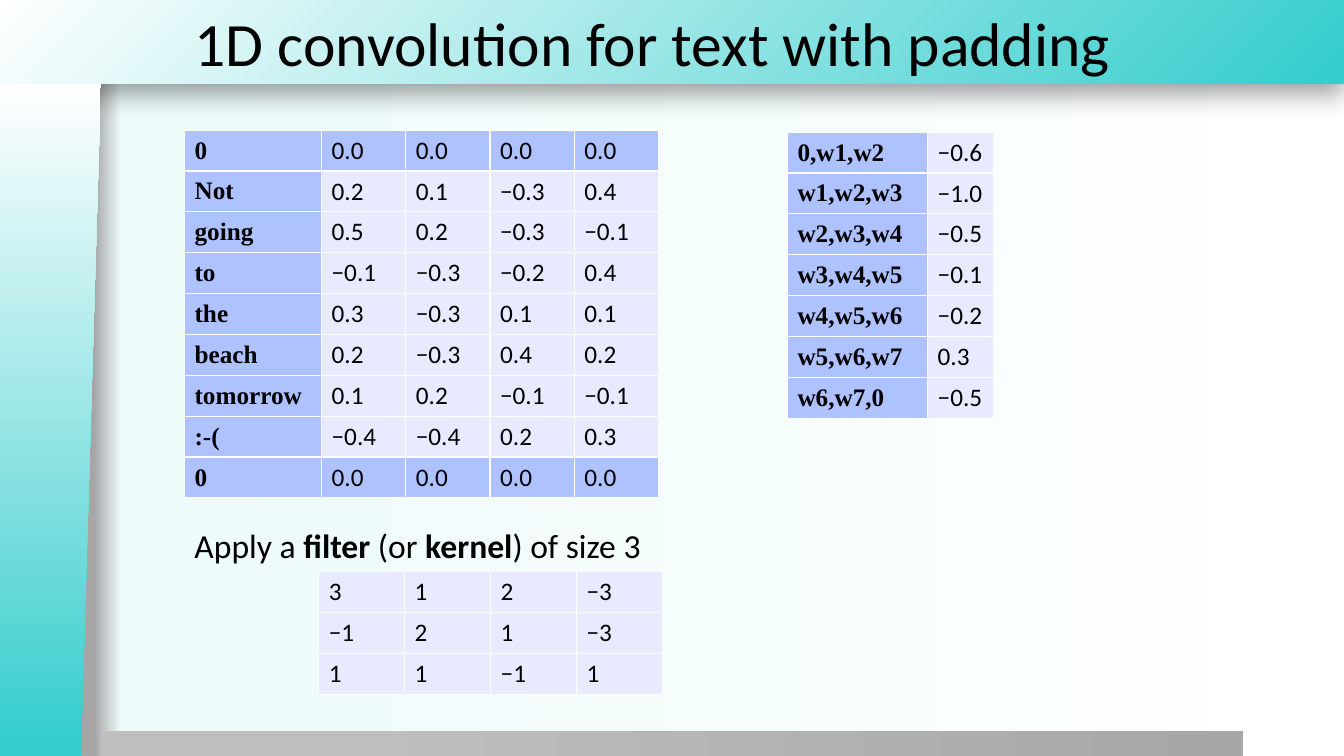
from pptx import Presentation
from pptx import util as u
from pptx.dml.color import RGBColor
from pptx.enum import shapes, text
from pptx.oxml import parse_xml
from pptx.oxml.ns import nsdecls, qn

COLORS = {
    "teal": "34CCCC", "white": "FFFFFF", "black": "000000",
    "edge": "A6A6A6", "mist": "EDFBFB", "silver": "BFBFBF", "gray": "A7A7A7",
    "label": "ADC2FF", "value": "E8EAFF",
}
LINEAR = '<a:lin ang="0" scaled="0"/>'
FROM_CORNER = '<a:path path="circle"><a:fillToRect l="100000" t="100000"/></a:path>'

presentation = Presentation()
presentation.slide_width = u.Inches(13.33)
presentation.slide_height = u.Inches(7.5)
column = presentation.slide_width / 100
row = presentation.slide_height / 100
slide = presentation.slides.add_slide(presentation.slide_layouts[5])


def box(left, top, width, height):
    return [int(n) for n in (left * column, top * row, width * column, height * row)]


def fill_gradient(fill, properties, stops, direction):
    fill.solid()
    stop_xml = "".join(
        f'<a:gs pos="{position * 1000}"><a:srgbClr val="{COLORS[name]}"/></a:gs>'
        for position, name in stops)
    properties.replace(properties.find(qn("a:solidFill")), parse_xml(
        f'<a:gradFill {nsdecls("a")} rotWithShape="1">'
        f'<a:gsLst>{stop_xml}</a:gsLst>{direction}</a:gradFill>'))


background_fill = slide.background.fill
background_fill.solid()
fill_gradient(background_fill, slide.element.cSld.bg.bgPr,
              [(7, "edge"), (9, "mist"), (100, "white")], LINEAR)

bands = []
for kind, place, stops, direction in [
    (shapes.MSO_SHAPE.RECTANGLE, (-0.05, 0, 100.05, 11.07),
     [(0, "teal"), (100, "white")], FROM_CORNER),
    (shapes.MSO_SHAPE.RECTANGLE, (7.5, 96.67, 85, 3.47),
     [(20, "silver"), (100, "gray")], LINEAR),
    (shapes.MSO_SHAPE.FLOWCHART_MANUAL_INPUT, (-21.3, 48.93, 50.11, 13.33),
     [(1, "teal"), (100, "white")], LINEAR),
]:
    band = slide.shapes.add_shape(kind, *box(*place))
    band.line.fill.background()
    band.shadow.inherit = False
    fill_gradient(band.fill, band.element.spPr, stops, direction)
    bands.append(band)

header, footer, side = bands
side.rotation = 270
side.element.spPr.find(qn("a:xfrm")).set("flipV", "1")
header.element.spPr.find(qn("a:effectLst")).append(parse_xml(
    f'<a:outerShdw {nsdecls("a")} blurRad="{u.Pt(20)}" dist="{u.Pt(6)}" dir="5400000" '
    f'algn="t" rotWithShape="0"><a:srgbClr val="{COLORS["black"]}">'
    '<a:alpha val="40000"/></a:srgbClr></a:outerShdw>'))

title = slide.shapes.title
side.element.addnext(title.element)
title.left, title.top, title.width, title.height = box(13.73, 0, 86.27, 11.07)
title.text_frame.text = "1D convolution for text with padding"
title.text_frame.auto_size = text.MSO_AUTO_SIZE.NONE
title.text_frame.vertical_anchor = text.MSO_ANCHOR.MIDDLE
paragraph = title.text_frame.paragraphs[0]
paragraph.alignment = text.PP_ALIGN.LEFT
paragraph.font.size = u.Pt(44)
paragraph.font.name = "Calibri"
paragraph.font.color.rgb = RGBColor.from_string(COLORS["black"])

embeddings = [
    ["0", "0.0", "0.0", "0.0", "0.0"],
    ["Not", "0.2", "0.1", "−0.3", "0.4"],
    ["going", "0.5", "0.2", "−0.3", "−0.1"],
    ["to", "−0.1", "−0.3", "−0.2", "0.4"],
    ["the", "0.3", "−0.3", "0.1", "0.1"],
    ["beach", "0.2", "−0.3", "0.4", "0.2"],
    ["tomorrow", "0.1", "0.2", "−0.1", "−0.1"],
    [":-(", "−0.4", "−0.4", "0.2", "0.3"],
    ["0", "0.0", "0.0", "0.0", "0.0"],
]
kernel = [["3", "1", "2", "−3"], ["−1", "2", "1", "−3"], ["1", "1", "−1", "1"]]
outputs = [
    ["0,w1,w2", "−0.6"], ["w1,w2,w3", "−1.0"], ["w2,w3,w4", "−0.5"],
    ["w3,w4,w5", "−0.1"], ["w4,w5,w6", "−0.2"], ["w5,w6,w7", "0.3"],
    ["w6,w7,0", "−0.5"],
]
row_height = 5.41

for left, top, widths, rows, has_labels in [
    (13.73, 17.2, [10.2] + [6.27] * 4, embeddings, True),
    (23.71, 75.6, [6.4] * 4, kernel, False),
    (58.59, 17.47, [10.43, 4.88], outputs, True),
]:
    table = slide.shapes.add_table(
        len(rows), len(widths),
        *box(left, top, sum(widths), row_height * len(rows))).table
    table.first_row = False
    table.horz_banding = False
    for table_column, width in zip(table.columns, widths):
        table_column.width = int(width * column)
    for row_index, values in enumerate(rows):
        is_padding = has_labels and values[0] == "0"
        for column_index, value in enumerate(values):
            is_label = has_labels and column_index == 0
            cell = table.cell(row_index, column_index)
            cell.text = value
            cell.vertical_anchor = text.MSO_ANCHOR.MIDDLE
            cell.fill.solid()
            cell.fill.fore_color.rgb = RGBColor.from_string(
                COLORS["label" if is_label or is_padding else "value"])
            font = cell.text_frame.paragraphs[0].font
            font.size = u.Pt(18)
            font.name = "Times New Roman" if is_label else "Calibri"
            font.bold = is_label
            font.color.rgb = RGBColor.from_string(COLORS["black"])

caption = slide.shapes.add_textbox(*box(13.73, 68.8, 35.56, 6.67))
caption.text_frame.word_wrap = False
caption.text_frame.auto_size = text.MSO_AUTO_SIZE.SHAPE_TO_FIT_TEXT
paragraph = caption.text_frame.paragraphs[0]
paragraph.font.size = u.Pt(24)
paragraph.font.name = "Calibri"
paragraph.font.color.rgb = RGBColor.from_string(COLORS["black"])
for words, is_bold in [("Apply a ", False), ("filter ", True), ("(or ", False),
                       ("kernel", True), (") of size 3", False)]:
    run = paragraph.add_run()
    run.text = words
    run.font.bold = is_bold

presentation.save("out.pptx")
